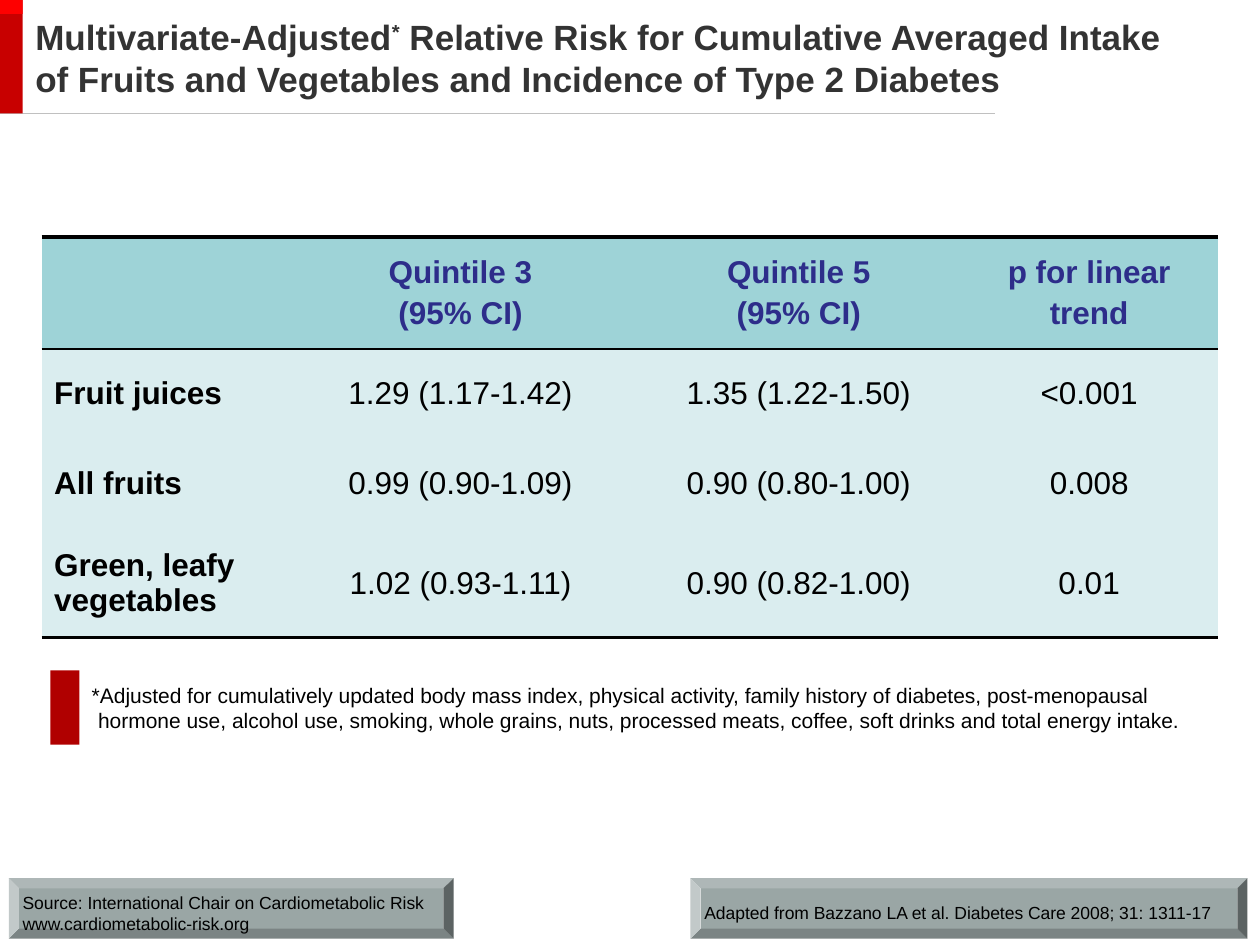
from dataclasses import dataclass

from lxml import etree
from pptx import Presentation
from pptx.dml.color import RGBColor
from pptx.enum.shapes import MSO_CONNECTOR, MSO_SHAPE
from pptx.enum.text import MSO_ANCHOR, PP_ALIGN
from pptx.oxml.ns import qn
from pptx.util import Inches, Pt

RECT, BEVEL = MSO_SHAPE.RECTANGLE, MSO_SHAPE.BEVEL
LINE = MSO_CONNECTOR.STRAIGHT
LEFT, CENTER = PP_ALIGN.LEFT, PP_ALIGN.CENTER
MIDDLE = MSO_ANCHOR.MIDDLE


@dataclass(frozen=True)
class Theme:
    font: str = "Arial"
    ink: str = "000000"
    title: str = "333333"
    head: str = "2D2D8A"
    head_fill: str = "9ED3D7"
    body_fill: str = "DAEDEF"
    red: str = "C80000"
    bright: str = "FE0000"
    mark: str = "B00000"
    rule: str = "C0C0C0"
    plate: str = "9AA6A5"
    title_size: int = 20
    cell_size: int = 18
    note_size: int = 12
    foot_size: int = 10


@dataclass(frozen=True)
class Box:
    left: float
    top: float
    width: float
    height: float

    def place(self) -> tuple:
        return tuple(Inches(v) for v in (self.left, self.top, self.width, self.height))


@dataclass(frozen=True)
class Plate:
    box: Box
    lines: tuple


THEME = Theme()
BLOCKS = (
    (Box(0, 0, 0.18, 0.9), THEME.red),
    (Box(0, 0, 0.18, 0.11), THEME.bright),
    (Box(0.4, 5.32, 0.23, 0.59), THEME.mark),
)
PLATES = (
    Plate(Box(0.07, 6.97, 3.53, 0.48),
          ("Source: International Chair on Cardiometabolic Risk",
           "www.cardiometabolic-risk.org")),
    Plate(Box(5.48, 6.97, 4.42, 0.48),
          ("Adapted from Bazzano LA et al. Diabetes Care 2008; 31: 1311-17",)),
)
TITLE = (
    ("Multivariate-Adjusted", 0),
    ("*", 30),
    (" Relative Risk for Cumulative Averaged Intake of Fruits and Vegetables "
     "and Incidence of Type 2 Diabetes", 0),
)
NOTE = ("*Adjusted for cumulatively updated body mass index, physical activity, "
        "family history of diabetes, post-menopausal hormone use, alcohol use, "
        "smoking, whole grains, nuts, processed meats, coffee, soft drinks and "
        "total energy intake.")
COLS = (1.92, 2.81, 2.56, 2.05)
ROWS = (0.89, 0.7, 0.73, 0.86)
CELLS = (
    ("", "Quintile 3\n(95% CI)", "Quintile 5\n(95% CI)", "p for linear\ntrend"),
    ("Fruit juices", "1.29 (1.17-1.42)", "1.35 (1.22-1.50)", "<0.001"),
    ("All fruits", "0.99 (0.90-1.09)", "0.90 (0.80-1.00)", "0.008"),
    ("Green, leafy vegetables", "1.02 (0.93-1.11)", "0.90 (0.82-1.00)", "0.01"),
)
# Widths of the horizontal rules above row 0, below row 0, ... ; 0 means none
RULES = (2.25, 1, 0, 0, 2.25)


def write(frame, lines: tuple, *, size: int, color: str = THEME.ink,
          bold: bool = False, align=LEFT, gap: float = 0) -> None:
    """Each line is a string or a tuple of (text, baseline percent) runs."""
    frame.word_wrap = True
    for i, line in enumerate(lines):
        para = frame.paragraphs[0] if i == 0 else frame.add_paragraph()
        para.alignment = align
        para.space_before = Pt(gap if i else 0)
        for text, base in ((line, 0),) if isinstance(line, str) else line:
            run = para.add_run()
            run.text = text
            font = run.font
            font.name, font.size, font.bold = THEME.font, Pt(size), bold
            font.color.rgb = RGBColor.from_string(color)
            if base:
                font._element.set("baseline", str(base * 1000))


def inset(frame, left: float, top: float, right: float, low: float) -> None:
    frame.margin_left, frame.margin_top = Inches(left), Inches(top)
    frame.margin_right, frame.margin_bottom = Inches(right), Inches(low)
    frame.vertical_anchor = MIDDLE


def add_block(slide, box: Box, fill: str, kind=RECT):
    shape = slide.shapes.add_shape(kind, *box.place())
    shape.shadow.inherit = False
    shape.fill.solid()
    shape.fill.fore_color.rgb = RGBColor.from_string(fill)
    shape.line.fill.background()
    return shape


def add_plate(slide, plate: Plate) -> None:
    shape = add_block(slide, plate.box, THEME.plate, BEVEL)
    shape.adjustments[0] = 0.08 / plate.box.height
    inset(shape.text_frame, 0.03, 0.07, 0, 0)
    write(shape.text_frame, plate.lines, size=THEME.foot_size)


def add_rule(slide) -> None:
    rule = slide.shapes.add_connector(LINE, 0, Inches(0.9), Inches(7.9), Inches(0.9))
    rule.line.color.rgb = RGBColor.from_string(THEME.rule)
    rule.line.width = Pt(0.75)
    etree.SubElement(rule._element.spPr, qn("a:effectLst"))


def set_edges(cell, top: float, low: float) -> None:
    props = cell._tc.get_or_add_tcPr()
    edges = (("a:lnL", 0), ("a:lnR", 0), ("a:lnT", top), ("a:lnB", low))
    for at, (tag, width) in enumerate(edges):
        line = etree.Element(qn(tag), w=str(Pt(width)))
        if width:
            fill = etree.SubElement(line, qn("a:solidFill"))
            etree.SubElement(fill, qn("a:srgbClr"), val=THEME.ink)
        else:
            etree.SubElement(line, qn("a:noFill"))
        props.insert(at, line)


def add_grid(slide, box: Box) -> None:
    grid = slide.shapes.add_table(len(ROWS), len(COLS), *box.place()).table
    for col, width in zip(grid.columns, COLS):
        col.width = Inches(width)
    for r, (height, texts) in enumerate(zip(ROWS, CELLS)):
        grid.rows[r].height = Inches(height)
        head = r == 0
        for c, text in enumerate(texts):
            cell = grid.cell(r, c)
            cell.vertical_anchor = MIDDLE
            cell.fill.solid()
            cell.fill.fore_color.rgb = RGBColor.from_string(
                THEME.head_fill if head else THEME.body_fill)
            set_edges(cell, RULES[r], RULES[r + 1])
            if text:
                write(cell.text_frame, tuple(text.split("\n")),
                      size=THEME.cell_size, bold=head or c == 0,
                      color=THEME.head if head else THEME.ink,
                      align=CENTER if c else LEFT, gap=3.6)


def add_title(slide, box: Box) -> None:
    title = slide.shapes.title
    title.left, title.top, title.width, title.height = box.place()
    inset(title.text_frame, 0.1, 0.05, 0.1, 0.05)
    write(title.text_frame, (TITLE,), size=THEME.title_size,
          color=THEME.title, bold=True)


def add_note(slide, box: Box) -> None:
    frame = slide.shapes.add_textbox(*box.place()).text_frame
    inset(frame, 0.1, 0.05, 0.1, 0.05)
    write(frame, (NOTE,), size=THEME.note_size)
    props = frame.paragraphs[0]._p.get_or_add_pPr()
    props.set("marL", str(Inches(0.05)))
    props.set("indent", str(Inches(-0.05)))


def main() -> None:
    deck = Presentation()
    deck.slide_width, deck.slide_height = Inches(10), Inches(7.5)
    slide = deck.slides.add_slide(deck.slide_layouts[5])

    # Header rule, red blocks and source plates
    add_rule(slide)
    for box, fill in BLOCKS:
        add_block(slide, box, fill)
    for plate in PLATES:
        add_plate(slide, plate)

    # Title, risk table and footnote
    add_title(slide, Box(0.18, 0, 9.23, 0.91))
    add_grid(slide, Box(0.33, 1.88, sum(COLS), sum(ROWS)))
    add_note(slide, Box(0.63, 5.32, 8.97, 0.59))
    deck.save("out.pptx")


if __name__ == "__main__":
    main()
